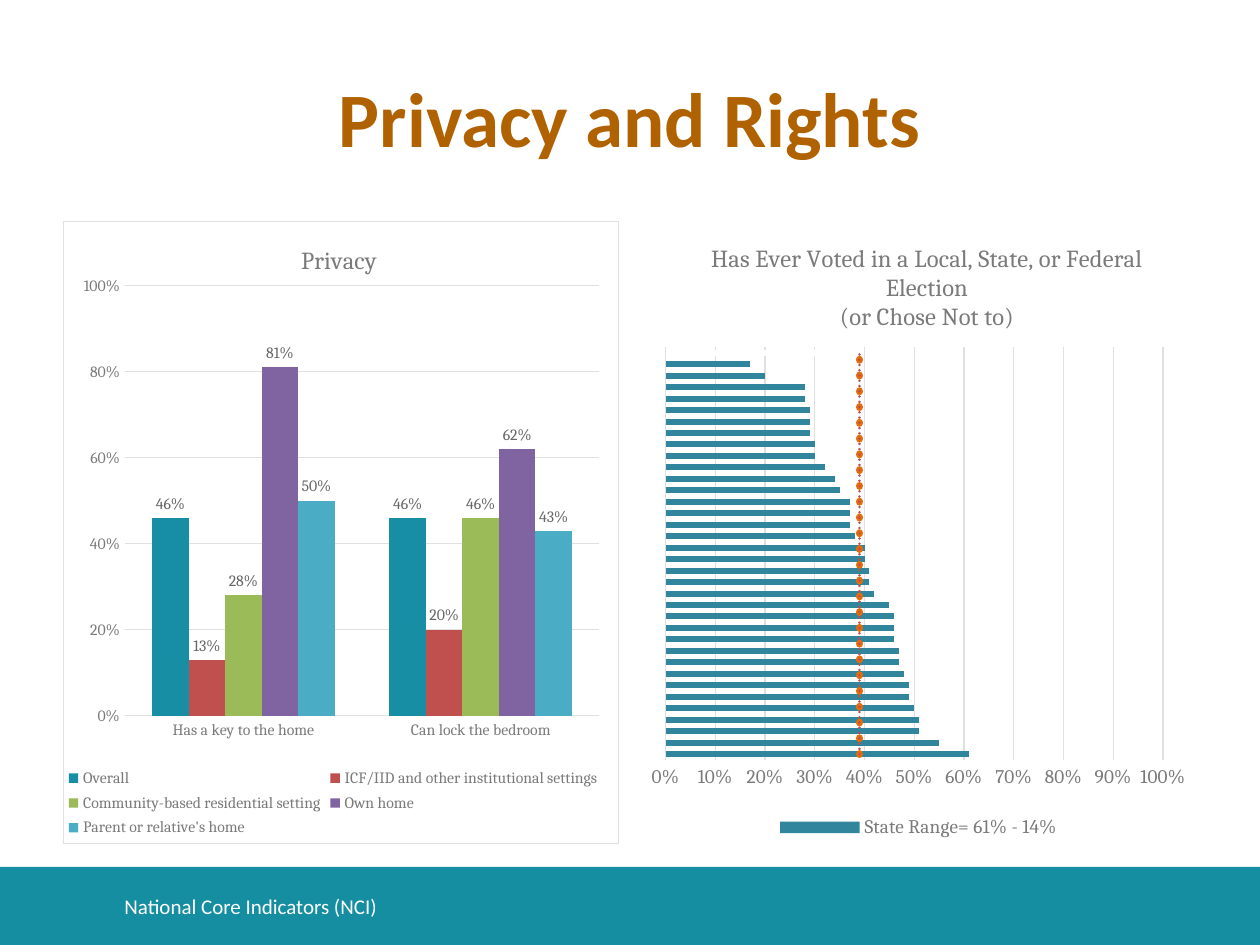
from pptx import Presentation
from pptx.chart.data import CategoryChartData
from pptx.dml.color import RGBColor
from pptx.enum.chart import XL_CHART_TYPE, XL_LABEL_POSITION, XL_LEGEND_POSITION, XL_TICK_LABEL_POSITION, XL_TICK_MARK
from pptx.enum.shapes import MSO_SHAPE
from pptx.enum.text import MSO_ANCHOR, PP_ALIGN
from pptx.oxml import parse_xml
from pptx.oxml.ns import nsdecls, qn
from pptx.util import Pt

COLORS = {
    "band": "168EA2", "title": "B06100", "white": "FFFFFF", "grid": "E0E0E0",
    "axis": "7A7A7A", "label": "666666", "chart_text": "333333",
    "state": "31859C", "average": "E46C0A", "average_thin": "C0504D",
}
PRIVACY_CATEGORIES = ["Has a key to the home", "Can lock the bedroom"]
PRIVACY_SERIES = [
    ("Overall", (0.46, 0.46), "178EA3"),
    ("ICF/IID and other institutional settings", (0.13, 0.2), "C0504D"),
    ("Community-based residential setting", (0.28, 0.46), "9BBB59"),
    ("Own home", (0.81, 0.62), "8064A2"),
    ("Parent or relative's home", (0.5, 0.43), "4BACC6"),
]
STATE_PERCENTS = [61, 55, 51, 51, 50, 49, 49, 48, 47, 47, 46, 46, 46, 45, 42, 41, 41, 40,
                  40, 38, 37, 37, 37, 35, 34, 32, 30, 30, 29, 29, 29, 28, 28, 20, 17, 14]


def rgb(name):
    return RGBColor.from_string(COLORS.get(name, name))


def format_font(font, size, color, name="Cambria", bold=False):
    font.size, font.name, font.bold = Pt(size), name, bold
    font.color.rgb = rgb(color)


def write_text(frame, text, align=PP_ALIGN.LEFT, **font_format):
    """Write one paragraph per line of text."""
    for index, line in enumerate(text.split("\n")):
        paragraph = frame.paragraphs[0] if index == 0 else frame.add_paragraph()
        paragraph.alignment = align
        run = paragraph.add_run()
        run.text = line
        format_font(run.font, **font_format)


def set_layout(element, x, y, width=None, height=None, inner=False):
    """Place a chart part by fractions of the chart size."""
    for old in element.findall(qn("c:layout")):
        element.remove(old)
    target = '<c:layoutTarget val="inner"/>' if inner else ""
    size = f'<c:w val="{width}"/><c:h val="{height}"/>' if width else ""
    layout = parse_xml(
        f'<c:layout {nsdecls("c")}><c:manualLayout>{target}<c:xMode val="edge"/><c:yMode val="edge"/>'
        f'<c:x val="{x}"/><c:y val="{y}"/>{size}</c:manualLayout></c:layout>')
    before = [child for child in element
              if child.tag in (qn("c:tx"), qn("c:legendPos"), qn("c:legendEntry"))]
    element.insert(len(before), layout)


def add_trend_line(series, color, width):
    trend = parse_xml(
        f'<c:trendline {nsdecls("c", "a")}><c:spPr><a:ln w="{Pt(width)}" cap="rnd"><a:solidFill>'
        f'<a:srgbClr val="{COLORS[color]}"/></a:solidFill><a:prstDash val="sysDot"/></a:ln></c:spPr>'
        '<c:trendlineType val="linear"/><c:dispRSqr val="0"/><c:dispEq val="0"/></c:trendline>')
    series._element.find(qn("c:cat")).addprevious(trend)


def hide_legend_entries(legend, indexes):
    for index in reversed(indexes):
        entry = parse_xml(f'<c:legendEntry {nsdecls("c")}><c:idx val="{index}"/>'
                          '<c:delete val="1"/></c:legendEntry>')
        legend._element.find(qn("c:legendPos")).addnext(entry)


def add_chart_frame(chart):
    frame = parse_xml(
        f'<c:spPr {nsdecls("c", "a")}><a:solidFill><a:srgbClr val="{COLORS["white"]}"/></a:solidFill>'
        f'<a:ln w="{Pt(0.75)}"><a:solidFill><a:srgbClr val="{COLORS["grid"]}"/></a:solidFill></a:ln></c:spPr>')
    chart._chartSpace.find(qn("c:chart")).addnext(frame)


class SlideBuilder:
    def __init__(self, presentation):
        self.slide = presentation.slides.add_slide(presentation.slide_layouts[6])

    def band(self, left, top, width, height, color):
        shape = self.slide.shapes.add_shape(
            MSO_SHAPE.RECTANGLE, Pt(left), Pt(top), Pt(width), Pt(height))
        shape.shadow.inherit = False
        shape.fill.solid()
        shape.fill.fore_color.rgb = rgb(color)
        shape.line.fill.background()

    def text(self, left, top, width, height, text, **text_format):
        frame = self.slide.shapes.add_textbox(Pt(left), Pt(top), Pt(width), Pt(height)).text_frame
        frame.word_wrap = True
        frame.vertical_anchor = MSO_ANCHOR.MIDDLE
        write_text(frame, text, name="Calibri", **text_format)

    def chart(self, kind, left, categories, series, title, title_at, plot,
              size, gap, overlap, major_unit):
        data = CategoryChartData(number_format="0%")
        data.categories = categories
        for name, values, _ in series:
            data.add_series(name, values)
        chart = self.slide.shapes.add_chart(
            kind, Pt(left), Pt(126), Pt(318), Pt(356.4), data).chart
        format_font(chart.font, size, "chart_text")

        # Title, legend and plot area
        chart.has_title = True
        write_text(chart.chart_title.text_frame, title, align=PP_ALIGN.CENTER,
                   size=14, color="axis")
        chart.chart_title.include_in_layout = False
        set_layout(chart.chart_title._element, *title_at)
        chart.has_legend = True
        chart.legend.position = XL_LEGEND_POSITION.BOTTOM
        chart.legend.include_in_layout = False
        format_font(chart.legend.font, size, "axis")
        set_layout(chart._chartSpace.chart.plotArea, *plot, inner=True)

        # Axes
        value_axis = chart.value_axis
        value_axis.minimum_scale, value_axis.maximum_scale = 0, 1
        value_axis.major_unit = major_unit
        value_axis.format.line.fill.background()
        value_axis.tick_labels.number_format = "0%"
        value_axis.tick_labels.number_format_is_linked = False
        for axis in (value_axis, chart.category_axis):
            axis.major_tick_mark = XL_TICK_MARK.NONE
            format_font(axis.tick_labels.font, size, "axis")
        for line in (value_axis.major_gridlines.format.line, chart.category_axis.format.line):
            line.color.rgb = rgb("grid")
            line.width = Pt(0.75)

        # Series
        plot_group = chart.plots[0]
        plot_group.vary_by_categories = False
        plot_group.gap_width, plot_group.overlap = gap, overlap
        for drawn, (_, _, color) in zip(plot_group.series, series):
            drawn.invert_if_negative = False
            if color:
                drawn.format.fill.solid()
                drawn.format.fill.fore_color.rgb = rgb(color)
            else:
                drawn.format.fill.background()
        return chart


def main():
    presentation = Presentation()
    presentation.slide_width, presentation.slide_height = Pt(720), Pt(540)
    builder = SlideBuilder(presentation)

    # Footer band and title
    builder.band(0, 495.4, 720, 44.6, "band")
    builder.text(36, 21.6, 648, 90, "Privacy and Rights", align=PP_ALIGN.CENTER,
                 size=44, color="title", bold=True)

    # Privacy columns
    privacy = builder.chart(
        XL_CHART_TYPE.COLUMN_CLUSTERED, 36, PRIVACY_CATEGORIES, PRIVACY_SERIES, "Privacy",
        (0.42, 0.03), (0.11, 0.104, 0.855, 0.691), size=9, gap=150, overlap=0, major_unit=0.2)
    add_chart_frame(privacy)
    set_layout(privacy.legend._element, 0, 0.87, 0.97, 0.13)
    for series in privacy.plots[0].series:
        labels = series.data_labels
        labels.show_value = True
        labels.number_format, labels.number_format_is_linked = "0%", False
        labels.position = XL_LABEL_POSITION.OUTSIDE_END
        format_font(labels.font, 9, "label")

    # Voting bars by state, with the average as a dotted line
    count = len(STATE_PERCENTS)
    voting = builder.chart(
        XL_CHART_TYPE.BAR_CLUSTERED, 366, [str(number + 1) for number in range(count)],
        [("State Range= 61% - 14%", [percent / 100 for percent in STATE_PERCENTS], "state"),
         ("NCI Average= 39%", [0.39] * count, None)],
        "Has Ever Voted in a Local, State, or Federal Election\n(or Chose Not to)",
        (0.12, 0.03), (0.045, 0.203, 0.894, 0.662), size=11, gap=92, overlap=100, major_unit=0.1)
    voting.category_axis.tick_label_position = XL_TICK_LABEL_POSITION.NONE
    voting.category_axis.visible = False
    average = voting.plots[0].series[1]
    last_bar = average.points[count - 1].format.fill
    last_bar.solid()
    last_bar.fore_color.rgb = rgb("white")
    add_trend_line(average, "average", 4.5)
    add_trend_line(average, "average_thin", 1.5)
    hide_legend_entries(voting.legend, [0, 3])

    # Footer text
    builder.text(64, 503.3, 533, 28.8, "National Core Indicators (NCI)", size=12, color="white")
    presentation.save("out.pptx")


if __name__ == "__main__":
    main()
